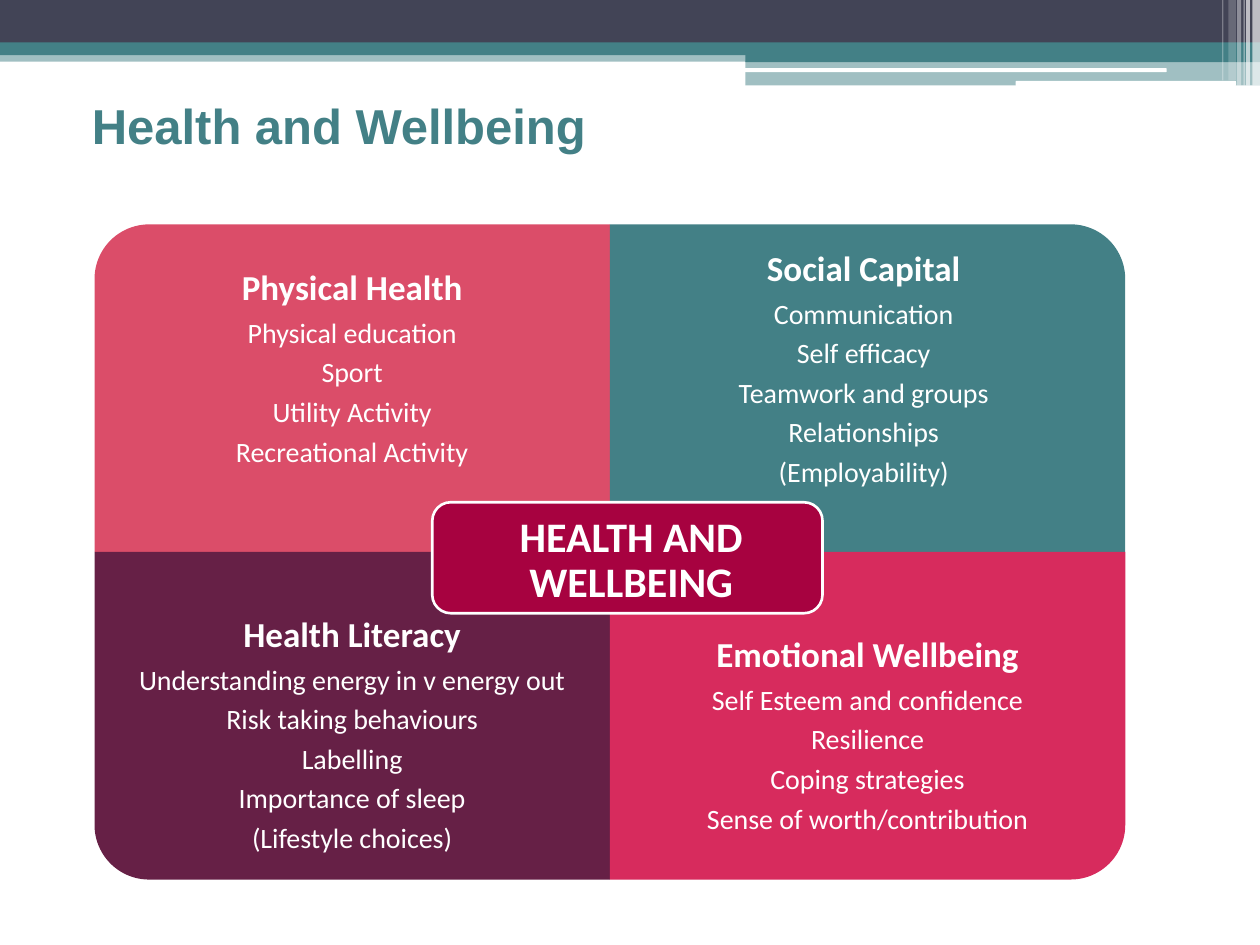
from dataclasses import dataclass

from lxml import etree
from pptx import Presentation
from pptx.dml.color import RGBColor
from pptx.enum.shapes import MSO_SHAPE
from pptx.enum.text import MSO_ANCHOR, PP_ALIGN
from pptx.oxml.ns import qn
from pptx.util import Pt

RECT = MSO_SHAPE.RECTANGLE
ROUNDED = MSO_SHAPE.ROUNDED_RECTANGLE
ONE_ROUND_CORNER = MSO_SHAPE.ROUND_1_RECTANGLE
TOP, MIDDLE = MSO_ANCHOR.TOP, MSO_ANCHOR.MIDDLE
LEFT, CENTER = PP_ALIGN.LEFT, PP_ALIGN.CENTER


@dataclass(frozen=True)
class Theme:
    white: str = "FFFFFF"
    slate: str = "424456"
    teal: str = "438086"
    coral: str = "DB4D69"
    plum: str = "662046"
    crimson: str = "D72B5D"
    wine: str = "A70240"
    title_font: str = "Arial"
    body_font: str = "Calibri"
    title_size: float = 28
    badge_size: float = 24
    heading_size: float = 20
    item_size: float = 16


@dataclass(frozen=True)
class Box:
    left: float
    top: float
    width: float
    height: float


@dataclass(frozen=True)
class Band:
    box: Box
    color: str
    opacity: int = 100
    kind: int = RECT


@dataclass(frozen=True)
class Quadrant:
    column: int
    row: int
    rotation: int
    color: str
    text_top: float
    text_shift: float
    heading: str
    items: tuple[str, ...]


THEME = Theme()
PAGE_WIDTH, PAGE_HEIGHT = 720, 540

# Header: coloured bands, white rules, then translucent stripes at the right
BANDS = [
    Band(Box(0, 28.8, PAGE_WIDTH, 6.5), THEME.teal, 50),
    Band(Box(0, 0, PAGE_WIDTH, 24.5), THEME.slate),
    Band(Box(0, 24.3, PAGE_WIDTH, 7.2), THEME.teal),
    Band(Box(426, 28.3, 294, 7.2), THEME.teal),
    Band(Box(426, 34.8, 294, 14), THEME.teal, 50),
    Band(Box(425.5, 39, 241.2, 2.2), THEME.white, kind=ROUNDED),
    Band(Box(580.3, 46.3, 126, 2.9), THEME.white, kind=ROUNDED),
]
# Left, width, height, opacity
STRIPES = [
    (715.7, 4.3, 49, 65),
    (712.1, 2.2, 49, 65),
    (710.6, 0.7, 49, 60),
    (707, 2.2, 49, 40),
    (702, 4.3, 46, 20),
    (698.4, 0.7, 46, 30),
]

# Quadrant grid
GRID_LEFT, GRID_TOP = 54, 128.2
PANEL_WIDTH, PANEL_HEIGHT = 294.5, 187.2
LINE_SPACING = 0.9
HEADING_GAP, ITEM_GAP = 6.5, 5.35

QUADRANTS = [
    Quadrant(0, 0, 270, THEME.coral, 154.3, 0, "Physical Health",
             ("Physical education", "Sport", "Utility Activity",
              "Recreational Activity")),
    Quadrant(1, 0, 0, THEME.teal, 143.4, -2.2, "Social Capital",
             ("Communication", "Self efficacy", "Teamwork and groups",
              "Relationships", "(Employability)")),
    Quadrant(0, 1, 180, THEME.plum, 352.5, 0, "Health Literacy",
             ("Understanding energy in v energy out",
              "Risk taking behaviours", "Labelling", "Importance of sleep",
              "(Lifestyle choices)")),
    Quadrant(1, 1, 90, THEME.crimson, 364, 0, "Emotional Wellbeing",
             ("Self Esteem and confidence", "Resilience",
              "Coping strategies", "Sense of worth/contribution")),
]


def add_block(page, kind: int, box: Box, color: str, opacity: int = 100):
    """Add a filled preset shape without outline."""
    block = page.shapes.add_shape(kind, Pt(box.left), Pt(box.top),
                                  Pt(box.width), Pt(box.height))
    block.shadow.inherit = False
    block.fill.solid()
    block.fill.fore_color.rgb = RGBColor.from_string(color)
    block.line.fill.background()
    if opacity < 100:
        color_node = block.fill._xPr.find(".//" + qn("a:srgbClr"))
        etree.SubElement(color_node, qn("a:alpha"), val=str(opacity * 1000))
    return block


def add_frame(page, box: Box, *, anchor: int = TOP, side: float = 7.2,
              vertical: float = 0):
    """Add an empty wrapping text box and return its text frame."""
    frame = page.shapes.add_textbox(Pt(box.left), Pt(box.top), Pt(box.width),
                                    Pt(box.height)).text_frame
    frame.word_wrap = True
    frame.vertical_anchor = anchor
    frame.margin_left = frame.margin_right = Pt(side)
    frame.margin_top = frame.margin_bottom = Pt(vertical)
    return frame


def write(para, text: str, *, size: float, color: str = THEME.white,
          font: str = THEME.body_font, bold: bool = False,
          align: int = CENTER, spacing: float = LINE_SPACING,
          gap: float = 0) -> None:
    """Fill one paragraph with formatted text."""
    para.alignment = align
    para.line_spacing = spacing
    para.space_after = Pt(gap)
    span = para.add_run()
    span.text = text
    span.font.size = Pt(size)
    span.font.name = font
    span.font.bold = bold
    span.font.color.rgb = RGBColor.from_string(color)


def draw_header(page) -> None:
    stripes = [Band(Box(left, 0, width, height), THEME.white, opacity)
               for left, width, height, opacity in STRIPES]
    for band in BANDS + stripes:
        add_block(page, band.kind, band.box, band.color, band.opacity)


def draw_quadrant(page, quadrant: Quadrant) -> None:
    left = GRID_LEFT + quadrant.column * PANEL_WIDTH
    top = GRID_TOP + quadrant.row * PANEL_HEIGHT
    panel = Box(left, top, PANEL_WIDTH, PANEL_HEIGHT)
    if quadrant.rotation % 180:  # a quarter turn swaps width and height
        offset = (PANEL_WIDTH - PANEL_HEIGHT) / 2
        panel = Box(left + offset, top - offset, PANEL_HEIGHT, PANEL_WIDTH)
    block = add_block(page, ONE_ROUND_CORNER, panel, quadrant.color)
    block.rotation = quadrant.rotation

    text_height = 28.5 + 23 * len(quadrant.items)
    frame = add_frame(page, Box(left + quadrant.text_shift, quadrant.text_top,
                                PANEL_WIDTH, text_height))
    write(frame.paragraphs[0], quadrant.heading, size=THEME.heading_size,
          bold=True, gap=HEADING_GAP)
    for item in quadrant.items:
        write(frame.add_paragraph(), item, size=THEME.item_size, gap=ITEM_GAP)


def draw_badge(page) -> None:
    badge = add_block(page, ROUNDED, Box(247, 287, 223, 63.4), THEME.wine)
    badge.line.color.rgb = RGBColor.from_string(THEME.white)
    badge.line.width = Pt(1.5)
    frame = add_frame(page, Box(252, 292.3, 217.4, 56.9), anchor=MIDDLE)
    write(frame.paragraphs[0], "HEALTH AND WELLBEING", size=THEME.badge_size,
          bold=True)


def main() -> None:
    deck = Presentation()
    deck.slide_width, deck.slide_height = Pt(PAGE_WIDTH), Pt(PAGE_HEIGHT)
    page = deck.slides.add_slide(deck.slide_layouts[6])

    draw_header(page)
    title = add_frame(page, Box(45.4, 51.1, 567.4, 41), vertical=3.6)
    write(title.paragraphs[0], "Health and Wellbeing", size=THEME.title_size,
          color=THEME.teal, font=THEME.title_font, bold=True, align=LEFT,
          spacing=1)
    for quadrant in QUADRANTS:
        draw_quadrant(page, quadrant)
    draw_badge(page)
    deck.save("out.pptx")


if __name__ == "__main__":
    main()
